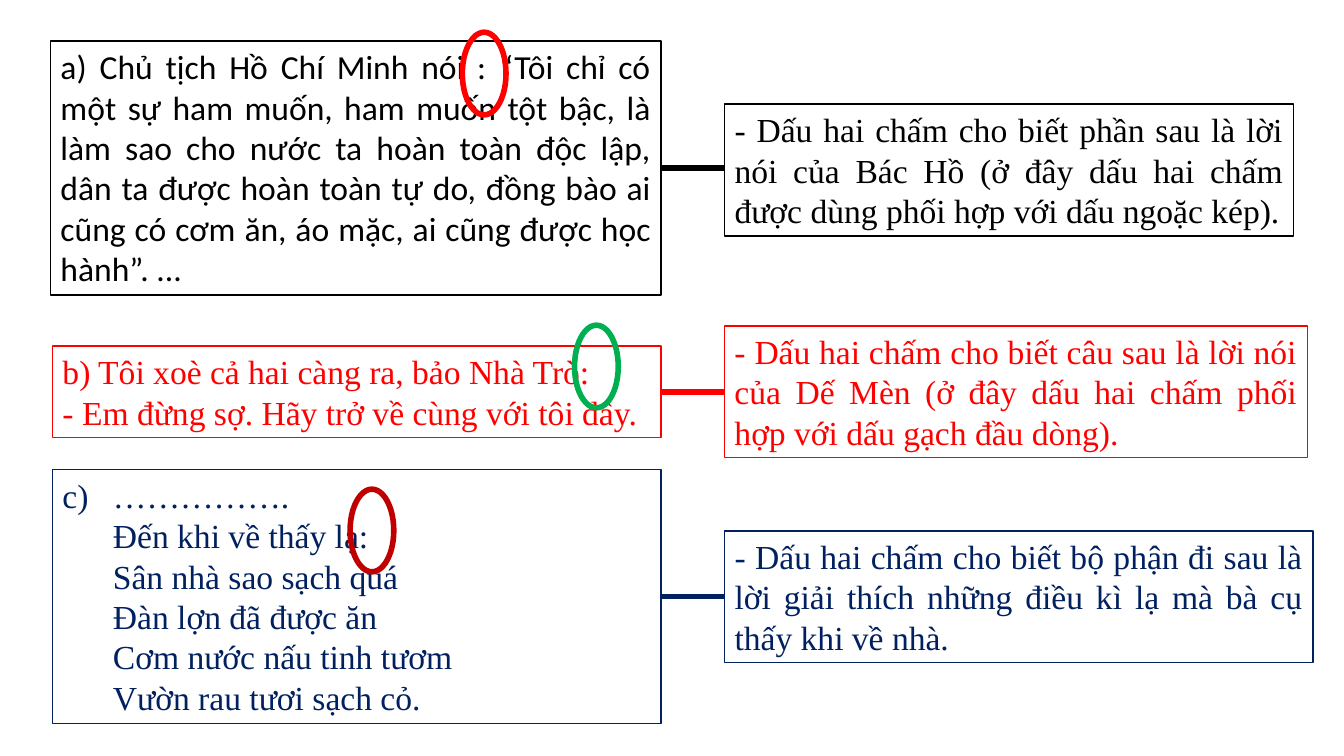
"""Build a slide matching three colon examples with their explanations."""
import pptx
import pptx.dml.color
import pptx.enum.shapes
import pptx.enum.text
import pptx.oxml.ns
import pptx.util
import lxml.etree

presentation = pptx.Presentation()
presentation.slide_width = pptx.util.Inches(10)
presentation.slide_height = presentation.slide_width * 9 // 16
slide = presentation.slides.add_slide(presentation.slide_layouts[6])

CELL = presentation.slide_width / 100
LEFT_EDGE, RIGHT_COLUMN = 49.2, 53.9
NOTE_HEIGHT = 9.8
VERSE_INDENT = round(3.75 * CELL)
SERIF = "Times New Roman"
ALIGN = pptx.enum.text.PP_ALIGN


def paint(color_format, color):
    color_format.rgb = pptx.dml.color.RGBColor.from_string(color)


def add_box(bounds, lines, color, font_name, alignment):
    box = slide.shapes.add_textbox(*[round(value * CELL) for value in bounds])
    paint(box.line.color, color)
    box.line.width = pptx.util.Pt(0.75)
    frame = box.text_frame
    frame.word_wrap = True
    frame.auto_size = pptx.enum.text.MSO_AUTO_SIZE.SHAPE_TO_FIT_TEXT
    frame.margin_left = frame.margin_right = round(0.75 * CELL)
    frame.margin_top = frame.margin_bottom = round(0.38 * CELL)
    frame.text = "\n".join(lines)
    for paragraph in frame.paragraphs:
        paragraph.alignment = alignment
        paragraph.font.name = font_name
        paragraph.font.size = pptx.util.Pt(18)
        paint(paragraph.font.color, color)
    return box


rows = [
    ("000000", "Calibri", ALIGN.JUSTIFY, (3.75, 3.05, 18.9), [
        "a) Chủ tịch Hồ Chí Minh nói : “Tôi chỉ có một sự ham muốn, ham muốn tột bậc, "
        "là làm sao cho nước ta hoàn toàn độc lập, dân ta được hoàn toàn tự do, "
        "đồng bào ai cũng có cơm ăn, áo mặc, ai cũng được học hành”. ..."],
     (7.75, 42.35),
     "- Dấu hai chấm cho biết phần sau là lời nói của Bác Hồ "
     "(ở đây dấu hai chấm được dùng phối hợp với dấu ngoặc kép)."),
    ("FF0000", SERIF, ALIGN.JUSTIFY, (3.9, 25.75, 6.8), [
        "b) Tôi xoè cả hai càng ra, bảo Nhà Trò:",
        "- Em đừng sợ. Hãy trở về cùng với tôi đây."],
     (24.25, 43.4),
     "- Dấu hai chấm cho biết câu sau là lời nói của Dế Mèn "
     "(ở đây dấu hai chấm phối hợp với dấu gạch đầu dòng)."),
    ("002060", SERIF, ALIGN.LEFT, (3.9, 34.95, 18.9), [
        "c)\t…………….",
        "Đến khi về thấy lạ:",
        "Sân nhà sao sạch quá",
        "Đàn lợn đã được ăn",
        "Cơm nước nấu tinh tươm",
        "Vườn rau tươi sạch cỏ."],
     (39.5, 43.8),
     "- Dấu hai chấm cho biết bộ phận đi sau là lời giải thích "
     "những điều kì lạ mà bà cụ thấy khi về nhà."),
]

for color, font_name, alignment, (left, top, height), lines, (note_top, note_width), note in rows:
    example = add_box((left, top, LEFT_EDGE - left, height), lines, color, font_name, alignment)
    explanation = add_box((RIGHT_COLUMN, note_top, note_width, NOTE_HEIGHT), [note],
                          color, SERIF, ALIGN.JUSTIFY)
    if len(lines) > 2:
        for paragraph in example.text_frame.paragraphs:
            properties = paragraph._p.get_or_add_pPr()
            properties.set("marL", str(VERSE_INDENT))
            properties.set("indent", str(-VERSE_INDENT if "\t" in paragraph.text else 0))

    middle = example.top + example.height // 2
    link = slide.shapes.add_connector(pptx.enum.shapes.MSO_CONNECTOR.STRAIGHT,
                                      example.left + example.width, middle,
                                      explanation.left, middle)
    link.begin_connect(example, 3)
    if abs(explanation.top + explanation.height // 2 - middle) < 0.1 * CELL:
        link.end_connect(explanation, 1)
    paint(link.line.color, color)
    link.line.width = pptx.util.Pt(3)
    lxml.etree.SubElement(link._element.spPr, pptx.oxml.ns.qn("a:effectLst"))

for left, top, color in [(34.4, 2.4, "FF0000"), (42.75, 24.2, "00B050"), (26.05, 36.4, "C00000")]:
    bounds = [round(value * CELL) for value in (left, top, 3.25, 6.15)]
    ring = slide.shapes.add_shape(pptx.enum.shapes.MSO_SHAPE.OVAL, *bounds)
    ring.shadow.inherit = False
    ring.fill.background()
    paint(ring.line.color, color)
    ring.line.width = pptx.util.Pt(3)

presentation.save("out.pptx")
